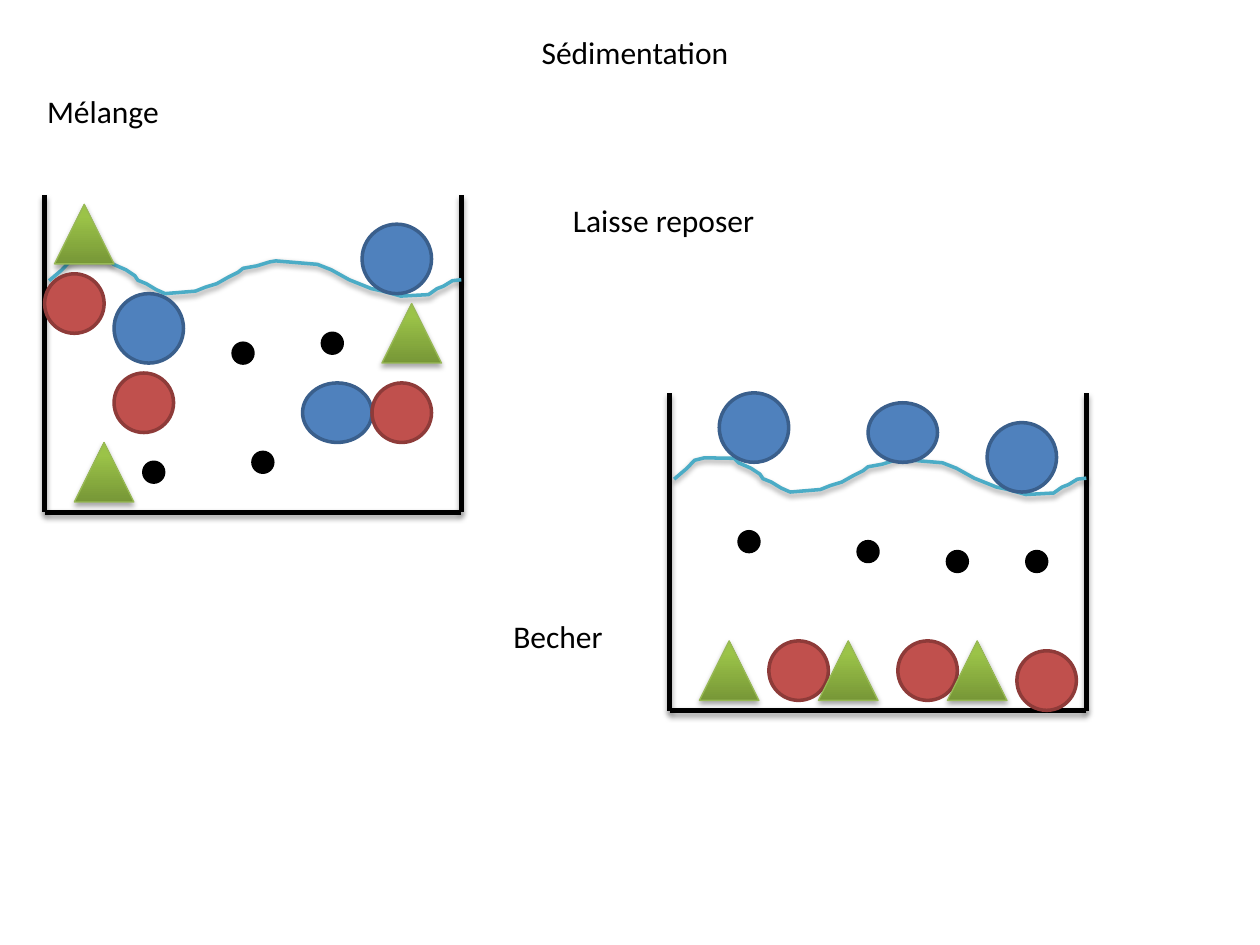
from dataclasses import dataclass

from lxml.etree import SubElement
from pptx import Presentation
from pptx.dml.color import RGBColor
from pptx.enum.shapes import MSO_CONNECTOR as Connector, MSO_SHAPE as Shape
from pptx.enum.text import MSO_ANCHOR as Anchor, MSO_AUTO_SIZE as AutoSize, PP_ALIGN as Align
from pptx.oxml.ns import qn
from pptx.util import Cm, Pt

BLACK = "000000"
BEAKER_WIDTH, BEAKER_HEIGHT = 8.4, 6.4


@dataclass(frozen=True)
class Kind:
    """Look of one sort of particle; size is its width and usual height in cm."""
    geometry: Shape
    size: float
    fill: str
    line: str
    line_width: float = 2
    fill_top: str = ""
    shadow: bool = False


@dataclass(frozen=True)
class Particle:
    kind: Kind
    left: float
    top: float
    height: float = 0


@dataclass(frozen=True)
class Beaker:
    left: float
    top: float
    particles: tuple[Particle, ...]


BLUE = Kind(Shape.OVAL, 1.4, "4F81BD", "3A5F8C")
RED = Kind(Shape.OVAL, 1.2, "C0504D", "8E3B39")
DOT = Kind(Shape.OVAL, 0.4, BLACK, BLACK)
TRIANGLE = Kind(Shape.ISOSCELES_TRIANGLE, 1.2, "779737", "98B955", 0.75, "9BC348", True)

MIXTURE = Beaker(0.9, 3.93, (
    Particle(BLUE, 2.3, 5.92), Particle(BLUE, 6.1, 7.72, 1.2), Particle(BLUE, 7.3, 4.52),
    Particle(DOT, 5.1, 9.12), Particle(DOT, 6.5, 6.72),
    Particle(DOT, 2.9, 9.32), Particle(DOT, 4.7, 6.92),
    Particle(RED, 2.3, 7.52), Particle(RED, 0.9, 5.52), Particle(RED, 7.5, 7.72),
    Particle(TRIANGLE, 1.5, 8.92), Particle(TRIANGLE, 1.1, 4.12), Particle(TRIANGLE, 7.7, 6.12),
))
SETTLED = Beaker(13.5, 7.93, (
    Particle(BLUE, 14.5, 7.92), Particle(BLUE, 17.5, 8.12, 1.2), Particle(BLUE, 19.9, 8.52),
    Particle(DOT, 20.7, 11.12), Particle(DOT, 19.1, 11.12),
    Particle(DOT, 14.9, 10.72), Particle(DOT, 17.3, 10.92),
    Particle(RED, 15.5, 12.92), Particle(RED, 18.1, 12.92), Particle(RED, 20.5, 13.12),
    Particle(TRIANGLE, 14.1, 12.92), Particle(TRIANGLE, 16.5, 12.92),
    Particle(TRIANGLE, 19.1, 12.92),
))

# Water surface in cm, measured from the beaker's top left corner
WAVE = (
    (0.09, 1.73), (0.35, 1.51), (0.5, 1.35), (0.7, 1.3), (1.3, 1.31), (1.39, 1.4),
    (1.64, 1.51), (1.82, 1.63), (1.88, 1.72), (2.05, 1.79), (2.25, 1.91), (2.43, 1.99),
    (3.04, 1.94), (3.24, 1.86), (3.47, 1.79), (3.7, 1.66), (3.9, 1.56), (4, 1.48),
    (4.28, 1.43), (4.54, 1.35), (4.66, 1.33), (5.5, 1.4), (5.78, 1.51), (6.14, 1.71),
    (6.59, 1.89), (6.82, 1.94), (7.18, 2.04), (7.74, 2.01), (7.91, 1.89), (8.04, 1.84),
    (8.22, 1.73), (8.4, 1.71),
)


def color(hex_value: str) -> RGBColor:
    return RGBColor.from_string(hex_value)


def set_line(shape, hex_value: str, width: float) -> None:
    shape.line.color.rgb = color(hex_value)
    shape.line.width = Pt(width)


def add_shadow(shape, opacity: int = 35, distance: float = 1.8) -> None:
    """Give a shape whose line is already set a soft shadow straight below it."""
    properties = shape._element.spPr
    effects = properties.find(qn("a:effectLst"))
    if effects is None:
        effects = SubElement(properties, qn("a:effectLst"))
    shadow = SubElement(effects, qn("a:outerShdw"), blurRad=str(Pt(3.1)),
                        dist=str(Pt(distance)), dir="5400000", rotWithShape="0")
    black = SubElement(shadow, qn("a:srgbClr"), val=BLACK)
    SubElement(black, qn("a:alpha"), val=str(opacity * 1000))


def write_text(shape, text: str, *, size: float = 18, align: Align = Align.LEFT,
               hex_value: str = BLACK) -> None:
    frame = shape.text_frame
    frame.word_wrap = True
    frame.auto_size = AutoSize.NONE
    frame.vertical_anchor = Anchor.TOP
    paragraph = frame.paragraphs[0]
    paragraph.alignment = align
    run = paragraph.add_run()
    run.text = text
    run.font.name = "Calibri"
    run.font.size = Pt(size)
    run.font.color.rgb = color(hex_value)


def add_label(slide, text: str, left: float, top: float, width: float) -> None:
    write_text(slide.shapes.add_textbox(Cm(left), Cm(top), Cm(width), Cm(1.02)), text)


def add_particle(slide, particle: Particle) -> None:
    kind = particle.kind
    shape = slide.shapes.add_shape(kind.geometry, Cm(particle.left), Cm(particle.top),
                                   Cm(kind.size), Cm(particle.height or kind.size))
    shape.shadow.inherit = False
    if kind.fill_top:
        shape.fill.gradient()
        shape.fill.gradient_angle = 90
        stops = zip(shape.fill.gradient_stops, (kind.fill, kind.fill_top), (0, 0.8))
        for stop, hex_value, position in stops:
            stop.color.rgb = color(hex_value)
            stop.position = position
    else:
        shape.fill.solid()
        shape.fill.fore_color.rgb = color(kind.fill)
    set_line(shape, kind.line, kind.line_width)
    if kind.shadow:
        add_shadow(shape)


def add_wave(slide, left: float, top: float) -> None:
    points = [(Cm(left + x), Cm(top + y)) for x, y in WAVE]
    builder = slide.shapes.build_freeform(*points[0])
    builder.add_line_segments(points[1:], close=False)
    wave = builder.convert_to_shape()
    wave.shadow.inherit = False
    wave.fill.background()
    set_line(wave, "4BACC6", 2)
    add_shadow(wave, opacity=38, distance=1.6)


def add_beaker(slide, beaker: Beaker) -> None:
    right, bottom = beaker.left + BEAKER_WIDTH, beaker.top + BEAKER_HEIGHT
    corners = ((beaker.left, beaker.top), (beaker.left, bottom),
               (right, bottom), (right, beaker.top))
    for start, end in zip(corners, corners[1:]):
        wall = slide.shapes.add_connector(Connector.STRAIGHT, *map(Cm, start + end))
        set_line(wall, BLACK, 3)
        add_shadow(wall)
    add_wave(slide, beaker.left, beaker.top)
    for particle in beaker.particles:
        add_particle(slide, particle)


def main() -> None:
    presentation = Presentation()
    presentation.slide_width, presentation.slide_height = Cm(25.4), Cm(19.05)
    slide = presentation.slides.add_slide(presentation.slide_layouts[5])

    title = slide.shapes.title
    title.left, title.top, title.width, title.height = Cm(0.7), Cm(0.53), Cm(24.2), Cm(4.88)
    write_text(title, "Sédimentation", align=Align.CENTER)

    for beaker in (MIXTURE, SETTLED):
        add_beaker(slide, beaker)

    add_label(slide, "Mélange", 0.7, 1.73, 6)
    add_label(slide, "Becher", 10.1, 12.32, 3)
    add_label(slide, "Laisse reposer", 11.3, 3.93, 7.4)
    presentation.save("out.pptx")


if __name__ == "__main__":
    main()
